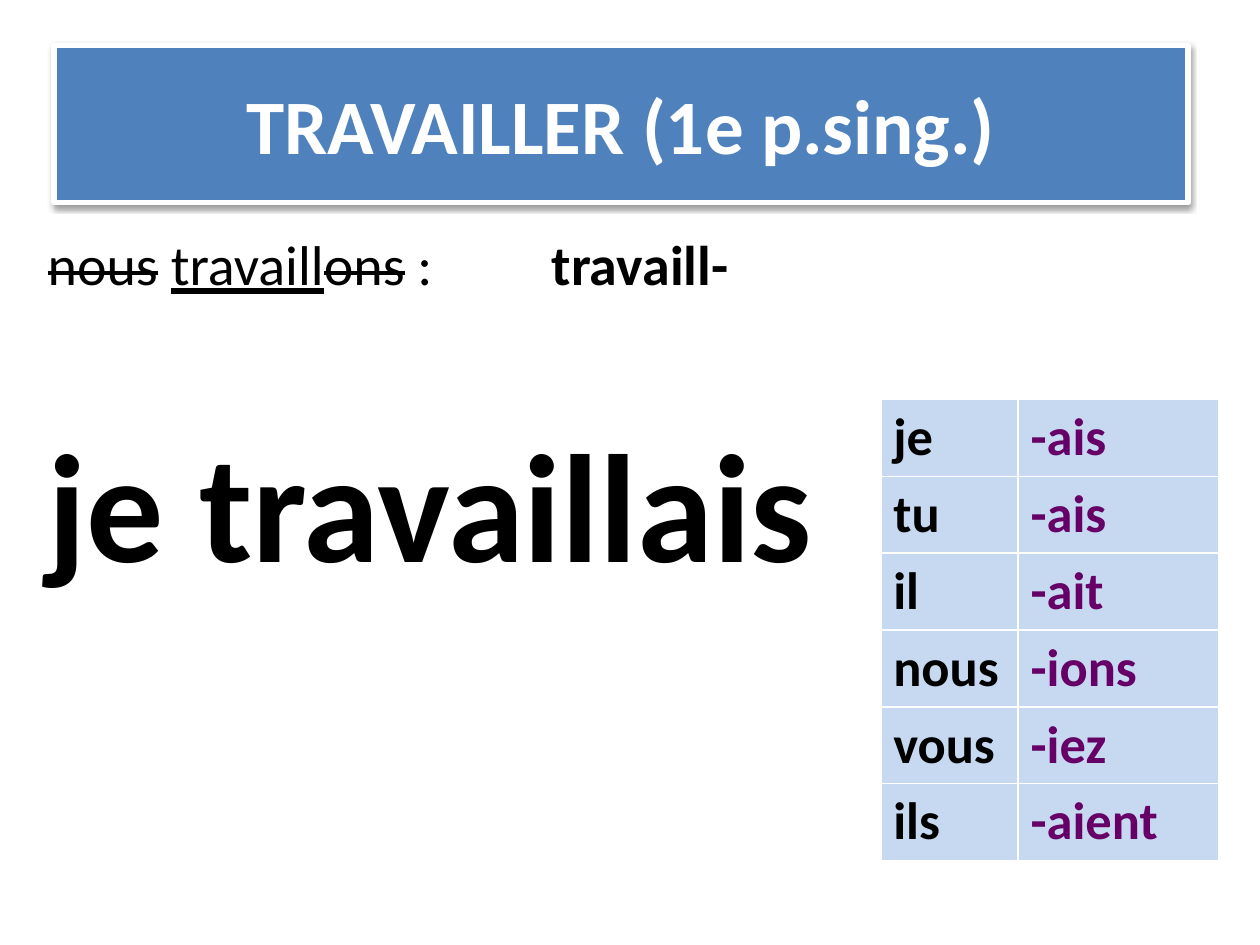
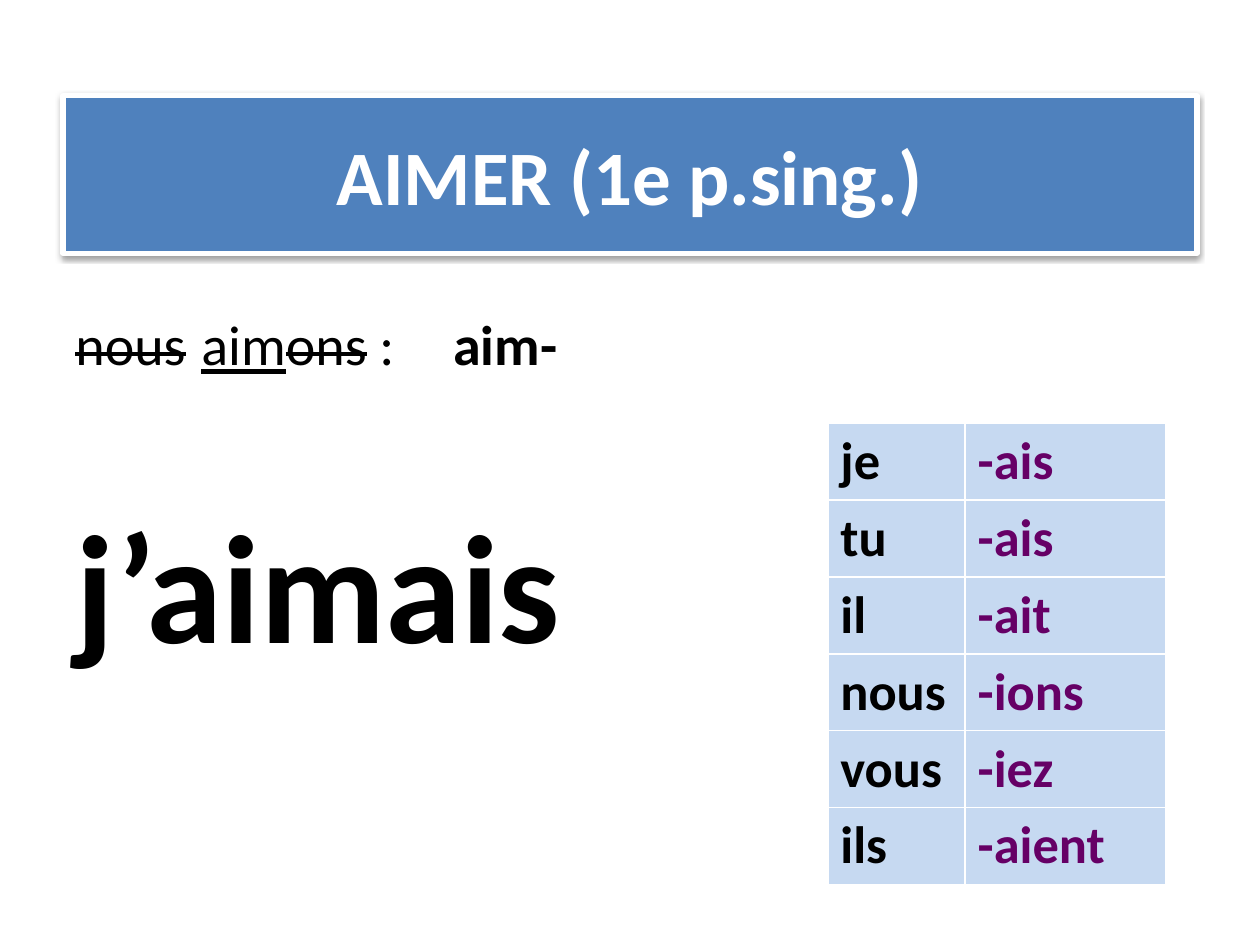
from dataclasses import dataclass

from pptx import Presentation
from pptx.dml.color import RGBColor
from pptx.enum.shapes import MSO_SHAPE
from pptx.enum.text import MSO_ANCHOR, PP_ALIGN
from pptx.oxml import parse_xml
from pptx.oxml.ns import nsdecls
from pptx.util import Inches, Pt

ENDINGS = [
    ("je", "-ais"),
    ("tu", "-ais"),
    ("il", "-ait"),
    ("nous", "-ions"),
    ("vous", "-iez"),
    ("ils", "-aient"),
]

VERBS = [
    {
        "title": "TRAVAILLER (1e p.sing.)",
        "stem": "travaill",
        "pronoun_gap": " ",
        "stem_gap": " :\t\t",
        "answer": "je travaillais",
        "title_at": (0.43, 0.36),
        "body_at": (0.28, 1.75, 9.22, 5.23),
        "body_inset": 0.07,
        "table_at": (6.99, 3.17),
    },
    {
        "title": "AIMER (1e p.sing.)",
        "stem": "aim",
        "pronoun_gap": " \t",
        "stem_gap": " : \t",
        "answer": "j’aimais",
        "title_at": (0.5, 0.76),
        "body_at": (0.5, 1.75, 9, 4.95),
        "body_inset": 0.71,
        "table_at": (6.57, 3.36),
    },
]

TITLE_SIZE = (9, 1.25)
COLUMN_WIDTHS = (1.09, 1.59)
ROW_HEIGHT = 0.61
ANSWER_GAP = 64


@dataclass(frozen=True)
class Theme:
    font: str = "Calibri"
    band: str = "4F81BD"
    light: str = "FFFFFF"
    text: str = "000000"
    cell: str = "C6D9F1"
    ending: str = "660066"
    title_size: int = 44
    body_size: int = 32
    answer_size: int = 88
    table_size: int = 30
    band_line: int = 3
    cell_line: int = 1


THEME = Theme()


def add_span(para, text, size, color=THEME.text, strike=False, **formats):
    span = para.add_run()
    span.text = text
    values = {"name": THEME.font, "size": Pt(size), **formats}
    for name, value in values.items():
        setattr(span.font, name, value)
    span.font.color.rgb = RGBColor.from_string(color)
    if strike:
        span._r.get_or_add_rPr().set("strike", "sngStrike")


def paint(fill, color):
    fill.solid()
    fill.fore_color.rgb = RGBColor.from_string(color)


def add_title(page, verb):
    box = page.shapes.add_shape(
        MSO_SHAPE.RECTANGLE, *map(Inches, verb["title_at"] + TITLE_SIZE)
    )
    paint(box.fill, THEME.band)
    paint(box.line.fill, THEME.light)
    box.line.width = Pt(THEME.band_line)
    box._element.spPr.append(parse_xml(
        f'<a:effectLst {nsdecls("a")}>'
        f'<a:outerShdw blurRad="{Pt(3.1)}" dist="{Pt(1.6)}" dir="5400000" rotWithShape="0">'
        f'<a:srgbClr val="{THEME.text}"><a:alpha val="38000"/></a:srgbClr>'
        '</a:outerShdw></a:effectLst>'
    ))
    frame = box.text_frame
    frame.word_wrap = True
    frame.vertical_anchor = MSO_ANCHOR.MIDDLE
    para = frame.paragraphs[0]
    para.alignment = PP_ALIGN.CENTER
    add_span(para, verb["title"], THEME.title_size, THEME.light, bold=True)


def add_body(page, verb):
    box = page.shapes.add_textbox(*map(Inches, verb["body_at"]))
    frame = box.text_frame
    frame.word_wrap = True
    frame.margin_top = Inches(verb["body_inset"])
    spans = [
        ("nous", {"strike": True}),
        (verb["pronoun_gap"], {}),
        (verb["stem"], {"underline": True}),
        ("ons", {"strike": True}),
        (verb["stem_gap"], {}),
        (verb["stem"] + "-", {"bold": True}),
    ]
    for text, formats in spans:
        add_span(frame.paragraphs[0], text, THEME.body_size, **formats)
    answer = frame.add_paragraph()
    answer.space_before = Pt(ANSWER_GAP)
    add_span(answer, verb["answer"], THEME.answer_size, bold=True)


def add_borders(cell):
    properties = cell._tc.get_or_add_tcPr()
    for side in "LRTB":
        properties.append(parse_xml(
            f'<a:ln{side} {nsdecls("a")} w="{Pt(THEME.cell_line)}"><a:solidFill>'
            f'<a:srgbClr val="{THEME.light}"/></a:solidFill></a:ln{side}>'
        ))


def add_endings(page, verb):
    size = (sum(COLUMN_WIDTHS), ROW_HEIGHT * len(ENDINGS))
    table = page.shapes.add_table(
        len(ENDINGS), len(COLUMN_WIDTHS), *map(Inches, verb["table_at"] + size)
    ).table
    table.first_row = table.horz_banding = False
    for column, width in zip(table.columns, COLUMN_WIDTHS):
        column.width = Inches(width)
    for row, texts in enumerate(ENDINGS):
        for column, (text, color) in enumerate(zip(texts, (THEME.text, THEME.ending))):
            cell = table.cell(row, column)
            add_borders(cell)
            paint(cell.fill, THEME.cell)
            para = cell.text_frame.paragraphs[0]
            add_span(para, text, THEME.table_size, color, bold=True)


def main():
    deck = Presentation()
    deck.slide_width, deck.slide_height = Inches(10), Inches(7.5)
    for verb in VERBS:
        page = deck.slides.add_slide(deck.slide_layouts[6])
        for add_part in (add_title, add_body, add_endings):
            add_part(page, verb)
    deck.save("out.pptx")


if __name__ == "__main__":
    main()
